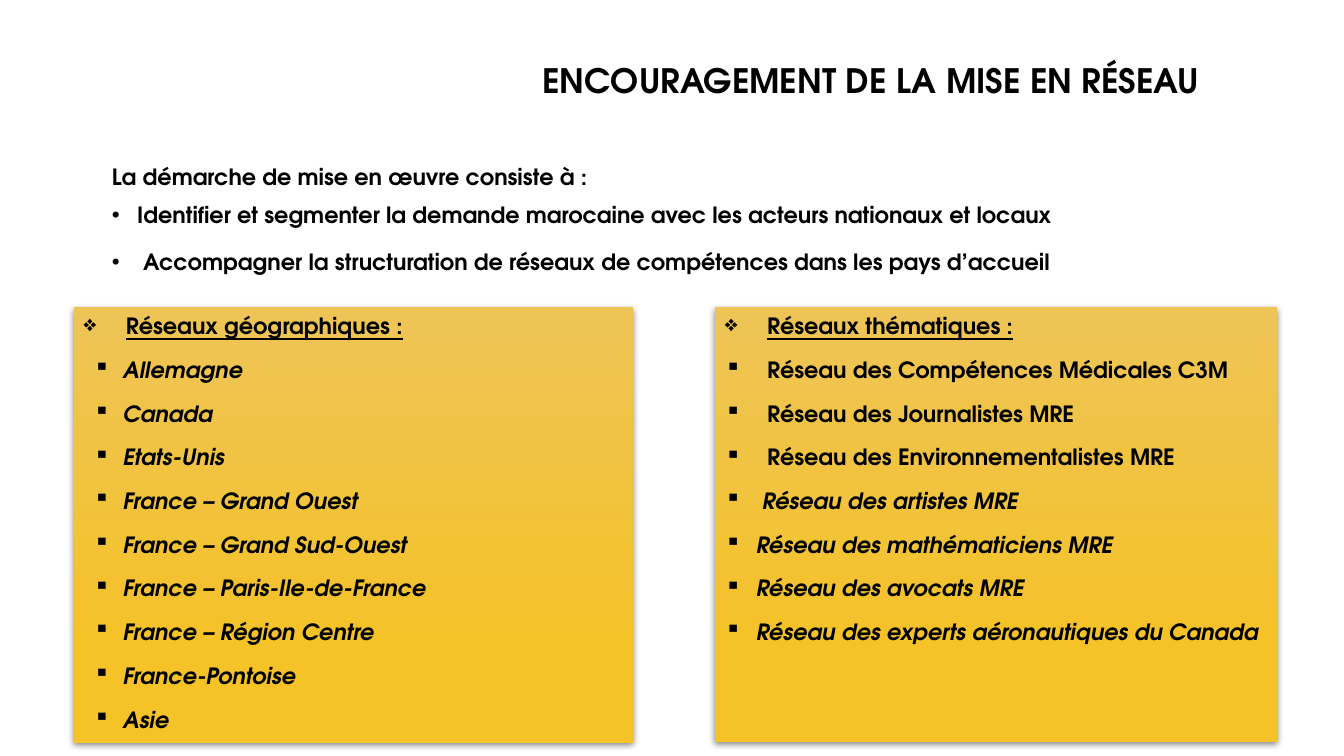
"""Build the slide on encouraging networking among the diaspora."""
import pptx
import pptx.dml.color
import pptx.enum.shapes
import pptx.enum.text
import pptx.oxml
import pptx.oxml.ns
import pptx.util
from dataclasses import dataclass


@dataclass(frozen=True)
class Theme:
    font: str = "TeX Gyre Adventor"
    ink: str = "000000"
    panel_top: str = "EEC457"
    panel_bottom: str = "F5C228"
    title_size: int = 24
    text_size: int = 16


theme = Theme()
left_align = pptx.enum.text.PP_ALIGN.LEFT
justify = pptx.enum.text.PP_ALIGN.JUSTIFY
top_anchor = pptx.enum.text.MSO_ANCHOR.TOP
namespace = pptx.oxml.ns.nsdecls("a")

presentation = pptx.Presentation()
presentation.slide_width = pptx.util.Inches(13.33)
presentation.slide_height = pptx.util.Inches(7.5)
slide = presentation.slides.add_slide(presentation.slide_layouts[1])


def place(shape, left, top, width, height, anchor):
    """Set a shape's box in hundredths of the slide and prepare its text frame."""
    shape.left = int(presentation.slide_width * left / 100)
    shape.top = int(presentation.slide_height * top / 100)
    shape.width = int(presentation.slide_width * width / 100)
    shape.height = int(presentation.slide_height * height / 100)
    frame = shape.text_frame
    frame.word_wrap = True
    frame.auto_size = pptx.enum.text.MSO_AUTO_SIZE.NONE
    frame.vertical_anchor = anchor
    return frame


def write(frame, number, text, size, align=left_align, bullet=None, margin=0.0, hanging=0.0,
          before=0, after=0, spacing=1.0, italic=False, underline=False):
    """Write one paragraph, adding it to the frame unless it is the first."""
    paragraph = frame.add_paragraph() if number else frame.paragraphs[0]
    paragraph.alignment = align
    paragraph.line_spacing = spacing
    paragraph.space_before = pptx.util.Pt(before if number else 0)
    paragraph.space_after = pptx.util.Pt(after)
    properties = paragraph._p.get_or_add_pPr()
    properties.set("marL", str(pptx.util.Inches(margin)))
    properties.set("indent", str(pptx.util.Inches(-hanging)))
    mark = f'<a:buChar {namespace} char="{bullet}"/>' if bullet else f"<a:buNone {namespace}/>"
    properties.append(pptx.oxml.parse_xml(mark))
    run = paragraph.add_run()
    run.text = text
    run.font.name = theme.font
    run.font.size = pptx.util.Pt(size)
    run.font.bold = True
    run.font.italic = italic
    run.font.underline = underline
    run.font.color.rgb = pptx.dml.color.RGBColor.from_string(theme.ink)


title_frame = place(slide.shapes.title, 36.98, 7.2, 63.77, 7.33, pptx.enum.text.MSO_ANCHOR.MIDDLE)
write(title_frame, 0, "ENCOURAGEMENT DE LA MISE EN RÉSEAU", theme.title_size, justify,
      margin=0.35, spacing=0.9)

approach = [
    ("La démarche de mise en œuvre consiste à :", None, 0.25, 0),
    ("Identifier et segmenter la demande marocaine avec les acteurs nationaux et locaux", "•", 0.25, 6),
    ("Accompagner la structuration de réseaux de compétences dans les pays d’accueil", "•", 0.31, 6),
]
body_frame = place(slide.placeholders[1], 7.58, 21.33, 88.3, 28.4, top_anchor)
for number, (text, bullet, indent, after) in enumerate(approach):
    write(body_frame, number, text, theme.text_size, bullet=bullet, margin=indent, hanging=indent,
          before=10, after=after, spacing=0.9)

regions = ["Allemagne", "Canada", "Etats-Unis", "France – Grand Ouest", "France – Grand Sud-Ouest",
           "France – Paris-Ile-de-France", "France – Région Centre", "France-Pontoise", "Asie"]
themes = [
    ("Réseau des Compétences Médicales C3M", 0.42, 0.42, False),
    ("Réseau des Journalistes MRE", 0.42, 0.42, False),
    ("Réseau des Environnementalistes MRE", 0.42, 0.42, False),
    ("Réseau des artistes MRE", 0.37, 0.37, True),
    ("Réseau des mathématiciens MRE", 0.31, 0.31, True),
    ("Réseau des avocats MRE", 0.31, 0.31, True),
    ("Réseau des experts aéronautiques du Canada", 0.31, 0.31, True),
]
panels = [
    (5.48, 41.63, 57.6, left_align, "Réseaux géographiques :",
     [(region, 0.39, 0.29, True) for region in regions]),
    (53.19, 41.86, 57.47, justify, "Réseaux thématiques :", themes),
]
for left, width, height, align, heading, networks in panels:
    panel = slide.shapes.add_shape(pptx.enum.shapes.MSO_SHAPE.RECTANGLE, 0, 0, 0, 0)
    panel_frame = place(panel, left, 40.67, width, height, top_anchor)
    panel.line.fill.background()
    panel.fill.gradient()
    panel.fill.gradient_angle = 270
    colours = [(0, theme.panel_top), (0.78, theme.panel_bottom)]
    for stop, (position, colour) in zip(panel.fill.gradient_stops, colours):
        stop.position = position
        stop.color.rgb = pptx.dml.color.RGBColor.from_string(colour)
    panel.shadow.inherit = False
    effects = panel._element.spPr.find(pptx.oxml.ns.qn("a:effectLst"))
    effects.append(pptx.oxml.parse_xml(
        f'<a:outerShdw {namespace} blurRad="{pptx.util.Pt(4.5)}" dist="{pptx.util.Pt(1.5)}" '
        f'dir="5400000" rotWithShape="0"><a:srgbClr val="{theme.ink}">'
        '<a:alpha val="48000"/></a:srgbClr></a:outerShdw>'))
    write(panel_frame, 0, heading, theme.text_size, align, "❖", 0.42, 0.42, after=6, underline=True)
    for number, (network, margin, hanging, italic) in enumerate(networks, 1):
        write(panel_frame, number, network, theme.text_size, align, "▪", margin, hanging,
              before=6, after=6, italic=italic)

presentation.save("out.pptx")
